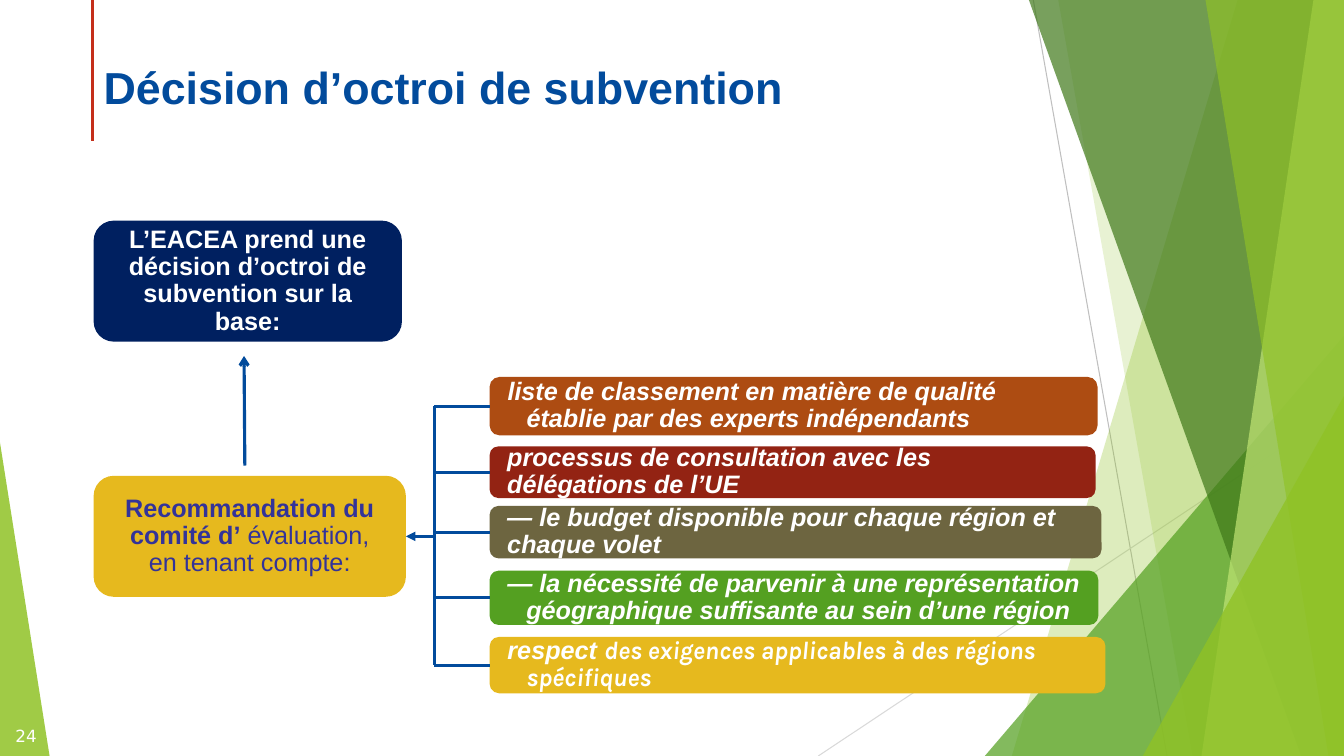
from pptx import Presentation
from pptx.dml.color import RGBColor
from pptx.enum.shapes import MSO_CONNECTOR, MSO_SHAPE
from pptx.enum.text import MSO_ANCHOR, PP_ALIGN
from pptx.oxml.ns import qn
from pptx.util import Cm, Pt
from lxml import etree

LINE = MSO_CONNECTOR.STRAIGHT
ROUND = MSO_SHAPE.ROUNDED_RECTANGLE
PEAK = MSO_SHAPE.ISOSCELES_TRIANGLE
MIDDLE, TOP = MSO_ANCHOR.MIDDLE, MSO_ANCHOR.TOP
LEFT, CENTER = PP_ALIGN.LEFT, PP_ALIGN.CENTER
SIDE_LEFT, SIDE_RIGHT = 1, 3

# Content
TITLE = "Décision d’octroi de subvention"
NUMBER = "24"
GOAL = [("L’EACEA prend une décision d’octroi de subvention sur la base:", {})]
ADVICE = [("Recommandation du comité d’", {"bold": True}),
          (" évaluation, en tenant compte:", {"bold": False})]


class Theme:
    blue, navy, gold, red = "024B9C", "002060", "E6B91E", "C42F1A"
    white, indigo = "FFFFFF", "333399"
    rust, brick, olive, green = "AD4C12", "932313", "6D6540", "54A021"
    lime, pale, forest = "90C226", "C0E474", "3F7819"
    grey, silver = "BFBFBF", "D9D9D9"
    face, accent, plain = "Arial", "Karla", "DejaVu Sans"
    head, body, small = 32, 18, 12
    rule, hair = 2.25, 0.75


# Criteria: runs, fill, top, width, height, hanging indent (cm)
BARS = [
    ([("liste de classement en matière de qualité établie par des experts "
       "indépendants", {})], Theme.rust, 9.5, 15.32, 1.47, 0.48),
    ([("processus de consultation avec les délégations de l’UE", {})],
     Theme.brick, 11.25, 15.27, 1.3, 0),
    ([("— le budget disponible pour chaque région et chaque volet", {})],
     Theme.olive, 12.75, 15.42, 1.32, 0),
    ([("— la nécessité de parvenir à une représentation géographique "
       "suffisante au sein d’une région", {})],
     Theme.green, 14.38, 15.34, 1.37, 0.48),
    ([("respect ", {"name": Theme.face}),
      ("des exigences applicables à des régions spécifiques",
       {"name": Theme.accent})], Theme.gold, 16.05, 15.52, 1.42, 0.48),
]

# Backdrop: bands (top x, foot x) and peaks (left, top, width, apex)
WIDE, HIGH = 33.87, 19.05
FACETS = [
    ((31.19, 25.5), Theme.lime, 30),
    ((26.67, 30.05), Theme.lime, 20),
    ((24.82, 8.46, 9.05, 1), Theme.green, 72),
    ((25.93, 32.79), Theme.forest, 70),
    ((33.1, 30.28), Theme.pale, 70),
    ((30.38, 33.48), Theme.lime, 65),
    ((28.8, 9.98, 5.07, 1), Theme.lime, 80),
    ((0, 11.15, 1.25, 0), Theme.lime, 85),
]
BAR_X, SPINE = 12.34, 10.95

deck = Presentation()
deck.slide_width, deck.slide_height = Cm(WIDE), Cm(HIGH)
slide = deck.slides.add_slide(deck.slide_layouts[6])
shapes = slide.shapes


def paint(shape, color, alpha=100):
    shape.shadow.inherit = False
    shape.fill.solid()
    shape.fill.fore_color.rgb = RGBColor.from_string(color)
    shape.line.fill.background()
    if alpha < 100:
        tint = shape.fill._xPr.find(".//" + qn("a:srgbClr"))
        etree.SubElement(tint, qn("a:alpha"), val=str(alpha * 1000))


def style(font, name=None, size=None, color=None, bold=None, italic=None):
    if name:
        font.name = name
    if size:
        font.size = Pt(size)
    if color:
        font.color.rgb = RGBColor.from_string(color)
    if bold is not None:
        font.bold = bold
    if italic is not None:
        font.italic = italic


def write(shape, runs, align, anchor=MIDDLE, hang=0, **look):
    frame = shape.text_frame
    frame.word_wrap, frame.vertical_anchor = True, anchor
    para = frame.paragraphs[0]
    para.alignment = align
    if hang:
        props = para._p.get_or_add_pPr()
        props.set("marL", str(Cm(hang)))
        props.set("indent", str(-Cm(hang)))
    style(para.font, **look)
    for words, extra in runs:
        run = para.add_run()
        run.text = words
        style(run.font, **extra)
    return frame, para


def label(runs, place, align, **look):
    return write(shapes.add_textbox(*map(Cm, place)), runs, align, **look)


def card(runs, place, fill, align, **look):
    box = shapes.add_shape(ROUND, *map(Cm, place))
    paint(box, fill)
    frame, para = write(box, runs, align, name=Theme.face, size=Theme.body,
                        **look)
    frame.margin_left = frame.margin_right = Cm(0.38)
    frame.margin_top = frame.margin_bottom = Cm(0.18)
    para.line_spacing = 0.9
    return box


def rule(start, end, color=Theme.blue, width=Theme.rule, tip=None):
    line = shapes.add_connector(LINE, *map(Cm, start + end))
    line.line.color.rgb = RGBColor.from_string(color)
    line.line.width = Pt(width)
    if tip:
        etree.SubElement(line.line._get_or_add_ln(), qn("a:tailEnd"), type=tip)
    etree.SubElement(line._element.spPr, qn("a:effectLst"))
    return line


# Backdrop
rule((26.04, 0), (29.41, HIGH), Theme.grey, Theme.hair)
rule((WIDE, 10.24), (20.62, HIGH), Theme.silver, Theme.hair)
for spot, color, alpha in FACETS:
    if len(spot) == 2:
        top, foot = spot
        pen = shapes.build_freeform(Cm(top), 0)
        pen.add_line_segments([(Cm(WIDE), 0), (Cm(WIDE), Cm(HIGH)),
                               (Cm(foot), Cm(HIGH))])
        facet = pen.convert_to_shape()
    else:
        left, top, width, apex = spot
        facet = shapes.add_shape(PEAK, Cm(left), Cm(top), Cm(width),
                                 Cm(HIGH - top))
        facet.adjustments[0] = apex
    paint(facet, color, alpha)
rule((2.34, 0), (2.34, 3.56), Theme.red)

# Decision and recommendation
card(GOAL, (2.36, 5.56, 7.77, 3.05), Theme.navy, CENTER,
     color=Theme.white, bold=True)
advice = card(ADVICE, (2.36, 11.99, 7.87, 3.05), Theme.gold, CENTER,
              color=Theme.indigo)
rule((6.17, 11.73), (6.15, 8.97), tip="arrow")

# Criteria, each with a branch from the spine
mids = [top + height / 2 for _, _, top, _, height, _ in BARS]
for (runs, fill, top, width, height, hang), mid in zip(BARS, mids):
    bar = card(runs, (BAR_X, top, width, height), fill, LEFT, hang=hang,
               color=Theme.white, bold=True, italic=True)
    rule((SPINE, mid), (BAR_X, mid)).end_connect(bar, SIDE_LEFT)
rule((SPINE, mids[0]), (SPINE, mids[-1]))
hub = 11.99 + 3.05 / 2
rule((SPINE, hub), (10.23, hub), tip="triangle").end_connect(advice, SIDE_RIGHT)

# Title and slide number
label([(TITLE, {})], (2.36, 1.37, 24.23, 2.13), LEFT, anchor=TOP,
      name=Theme.face, size=Theme.head, color=Theme.blue, bold=True)
label([(NUMBER, {})], (0, 18.03, 1.32, 1.02), CENTER,
      name=Theme.plain, size=Theme.small, color=Theme.white)

deck.save("out.pptx")
